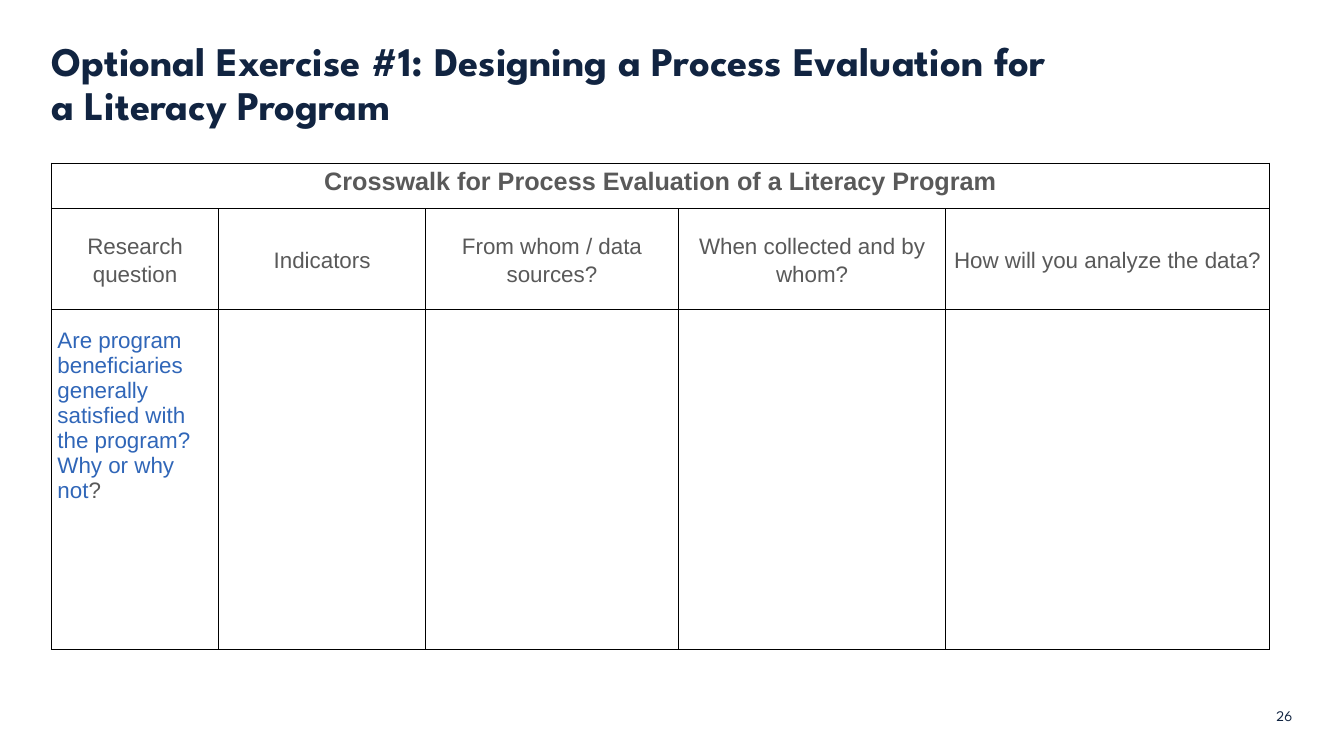
from lxml.etree import SubElement
from pptx import Presentation
from pptx.dml.color import RGBColor
from pptx.enum.text import MSO_ANCHOR as ANCHOR, MSO_AUTO_SIZE as AUTO, PP_ALIGN as ALIGN
from pptx.oxml.ns import qn
from pptx.util import Pt

PX = 9144  # 100 px to the inch
NAVY, GREY, BLUE, BLACK = "112441", "595959", "3066B8", "000000"
HEADING_FONT, TABLE_FONT = "League Spartan", "Arial"

COLUMNS = [166, 205, 251, 265, 321]
ROWS = [45, 100, 337]
HEADERS = ["Research question", "Indicators", "From whom / data sources?",
           "When collected and by whom?", "How will you analyze the data?"]
QUESTION = "Are program beneficiaries generally satisfied with the program? Why or why not"


def px(n):
    return int(n * PX)


def rgb(value):
    return RGBColor.from_string(value)


def style(p, font, size, color, bold=False, align=ALIGN.LEFT, spacing=1.0):
    p.alignment, p.line_spacing = align, spacing
    for r in p.runs:
        r.font.name, r.font.size, r.font.bold = font, Pt(size), bold
        r.font.color.rgb = rgb(color)


def set_frame(sp, x, y, w, h, anchor, wrap):
    sp.left, sp.top, sp.width, sp.height = map(px, (x, y, w, h))
    tf = sp.text_frame
    tf.margin_left = tf.margin_right = tf.margin_top = tf.margin_bottom = 0
    tf.vertical_anchor, tf.word_wrap, tf.auto_size = anchor, wrap, AUTO.NONE
    return tf


def add_title(s, x, y, w, h):
    tf = set_frame(s.shapes.title, x, y, w, h, ANCHOR.BOTTOM, True)
    tf.text = "Optional Exercise #1: Designing a Process Evaluation for a Literacy Program"
    style(tf.paragraphs[0], HEADING_FONT, 29, NAVY, bold=True, spacing=0.9)


def add_page_number(s, x, y, w, h):
    tf = set_frame(s.shapes.add_textbox(0, 0, 0, 0), x, y, w, h, ANCHOR.MIDDLE, False)
    tf.text = "26"
    style(tf.paragraphs[0], HEADING_FONT, 10.5, NAVY)


def format_cell(cell):
    cell.margin_left = cell.margin_right = px(6)
    cell.margin_top = cell.margin_bottom = 0
    # Borders come before the fill in the cell properties
    tcPr = cell._tc.get_or_add_tcPr()
    for side in ("a:lnL", "a:lnR", "a:lnT", "a:lnB"):
        ln = SubElement(tcPr, qn(side), w=str(Pt(1)))
        SubElement(SubElement(ln, qn("a:solidFill")), qn("a:srgbClr"), val=BLACK)
    cell.fill.background()


def add_crosswalk(s, x, y):
    frame = s.shapes.add_table(len(ROWS), len(COLUMNS), px(x), px(y),
                               px(sum(COLUMNS)), px(sum(ROWS)))
    table = frame.table
    table.first_row = table.horz_banding = False
    for col, w in zip(table.columns, COLUMNS):
        col.width = px(w)
    for row, h in zip(table.rows, ROWS):
        row.height = px(h)
    for cell in table.iter_cells():
        format_cell(cell)

    # Heading across all columns
    heading = table.cell(0, 0)
    heading.merge(table.cell(0, len(COLUMNS) - 1))
    heading.text = "Crosswalk for Process Evaluation of a Literacy Program"
    style(heading.text_frame.paragraphs[0], TABLE_FONT, 18, GREY,
          bold=True, align=ALIGN.CENTER, spacing=1.15)

    # Column headers
    for i, text in enumerate(HEADERS):
        cell = table.cell(1, i)
        cell.text, cell.vertical_anchor = text, ANCHOR.MIDDLE
        style(cell.text_frame.paragraphs[0], TABLE_FONT, 16, GREY,
              align=ALIGN.CENTER, spacing=1.15)

    # Research question, with its question mark in grey
    cell = table.cell(2, 0)
    cell.text, cell.margin_top = QUESTION, px(19)
    p = cell.text_frame.paragraphs[0]
    p.add_run().text = "?"
    style(p, TABLE_FONT, 16, BLUE)
    p.runs[-1].font.color.rgb = rgb(GREY)


def main():
    prs = Presentation()
    prs.slide_width, prs.slide_height = px(1333), px(750)
    s = prs.slides.add_slide(prs.slide_layouts[5])
    add_title(s, 51, 32, 1004, 96)
    add_crosswalk(s, 51, 162)
    add_page_number(s, 1266, 702, 26, 15)
    prs.save("out.pptx")


if __name__ == "__main__":
    main()
